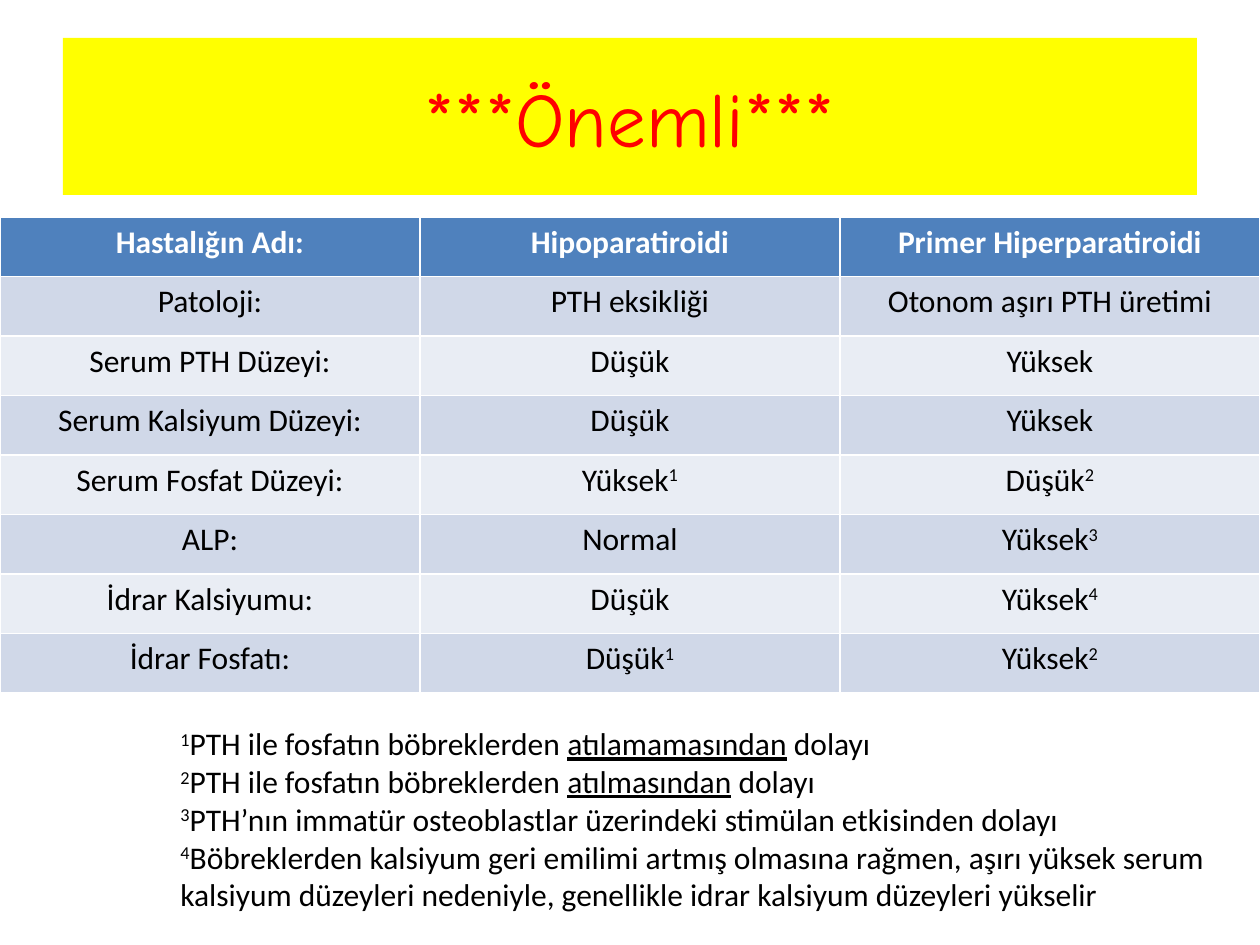
from dataclasses import dataclass

from pptx import Presentation
from pptx.dml.color import RGBColor
from pptx.enum.shapes import MSO_SHAPE
from pptx.enum.text import MSO_ANCHOR, PP_ALIGN
from pptx.util import Emu, Pt

PX = 914400 // 126


@dataclass(frozen=True)
class Theme:
    """Colours, fonts and type sizes of the slide."""
    banner: str = "FFFF00"
    alert: str = "FF0000"
    header: str = "4F81BD"
    header_text: str = "FFFFFF"
    bands: tuple = ("D0D8E8", "E9EDF4")
    text: str = "000000"
    title_font: str = "Comic Neue"
    body_font: str = "Calibri"
    title_size: int = 44
    body_size: int = 18


THEME = Theme()

COMPARISON = [
    ("Hastalığın Adı:", "Hipoparatiroidi", "Primer Hiperparatiroidi"),
    ("Patoloji:", "PTH eksikliği", "Otonom aşırı PTH üretimi"),
    ("Serum PTH Düzeyi:", "Düşük", "Yüksek"),
    ("Serum Kalsiyum Düzeyi:", "Düşük", "Yüksek"),
    ("Serum Fosfat Düzeyi:", "Yüksek|^1", "Düşük|^2"),
    ("ALP:", "Normal", "Yüksek|^3"),
    ("İdrar Kalsiyumu:", "Düşük", "Yüksek|^4"),
    ("İdrar Fosfatı:", "Düşük|^1", "Yüksek|^2"),
]

FOOTNOTES = [
    "^1|PTH ile fosfatın böbreklerden |_atılamamasından| dolayı",
    "^2|PTH ile fosfatın böbreklerden |_atılmasından| dolayı",
    "^3|PTH’nın immatür osteoblastlar üzerindeki stimülan etkisinden dolayı",
    "^4|Böbreklerden kalsiyum geri emilimi artmış olmasına rağmen, aşırı yüksek serum "
    "kalsiyum düzeyleri nedeniyle, genellikle idrar kalsiyum düzeyleri yükselir",
]


def scaled(box):
    """Turn a px box into EMU lengths."""
    return [Emu(length * PX) for length in box]


def style_font(font, name, size, color, bold=False):
    """Apply typeface, size, colour and weight to a font."""
    font.name, font.size, font.bold = name, Pt(size), bold
    font.color.rgb = RGBColor.from_string(color)


def write_marked(paragraph, marked, color, bold=False):
    """Write |-separated pieces; ^ raises a piece and _ underlines it."""
    for piece in marked.split("|"):
        run = paragraph.add_run()
        run.text = piece.lstrip("^_")
        style_font(run.font, THEME.body_font, THEME.body_size, color, bold)
        if piece.startswith("^"):
            run._r.get_or_add_rPr().set("baseline", "30000")
        elif piece.startswith("_"):
            run.font.underline = True


def add_banner(slide, box, title):
    """Draw the title on its coloured banner."""
    banner = slide.shapes.add_shape(MSO_SHAPE.RECTANGLE, *scaled(box))
    banner.shadow.inherit = False
    banner.fill.solid()
    banner.fill.fore_color.rgb = RGBColor.from_string(THEME.banner)
    banner.line.fill.background()
    frame = banner.text_frame
    frame.text = title
    frame.vertical_anchor = MSO_ANCHOR.MIDDLE
    heading = frame.paragraphs[0]
    heading.alignment = PP_ALIGN.CENTER
    style_font(heading.runs[0].font, THEME.title_font, THEME.title_size, THEME.alert)


def add_comparison(slide, box, rows):
    """Draw the banded disease comparison table."""
    table = slide.shapes.add_table(len(rows), len(rows[0]), *scaled(box)).table
    for row_index, row in enumerate(rows):
        is_header = row_index == 0
        fill = THEME.header if is_header else THEME.bands[(row_index - 1) % 2]
        color = THEME.header_text if is_header else THEME.text
        for column_index, marked in enumerate(row):
            cell = table.cell(row_index, column_index)
            cell.fill.solid()
            cell.fill.fore_color.rgb = RGBColor.from_string(fill)
            entry = cell.text_frame.paragraphs[0]
            entry.alignment = PP_ALIGN.CENTER
            write_marked(entry, marked, color, is_header)


def add_footnotes(slide, box, notes):
    """Write the numbered footnotes, one paragraph each."""
    frame = slide.shapes.add_textbox(*scaled(box)).text_frame
    frame.word_wrap = True
    for index, note in enumerate(notes):
        paragraph = frame.add_paragraph() if index else frame.paragraphs[0]
        write_marked(paragraph, note, THEME.text)


def main():
    """Build and save the slide."""
    deck = Presentation()
    deck.slide_width, deck.slide_height = scaled((1260, 945))
    slide = deck.slides.add_slide(deck.slide_layouts[6])
    add_banner(slide, (63, 38, 1134, 157), "***Önemli***")
    add_comparison(slide, (0, 217, 1260, 476), COMPARISON)
    add_footnotes(slide, (168, 718, 1074, 204), FOOTNOTES)
    deck.save("out.pptx")


if __name__ == "__main__":
    main()
